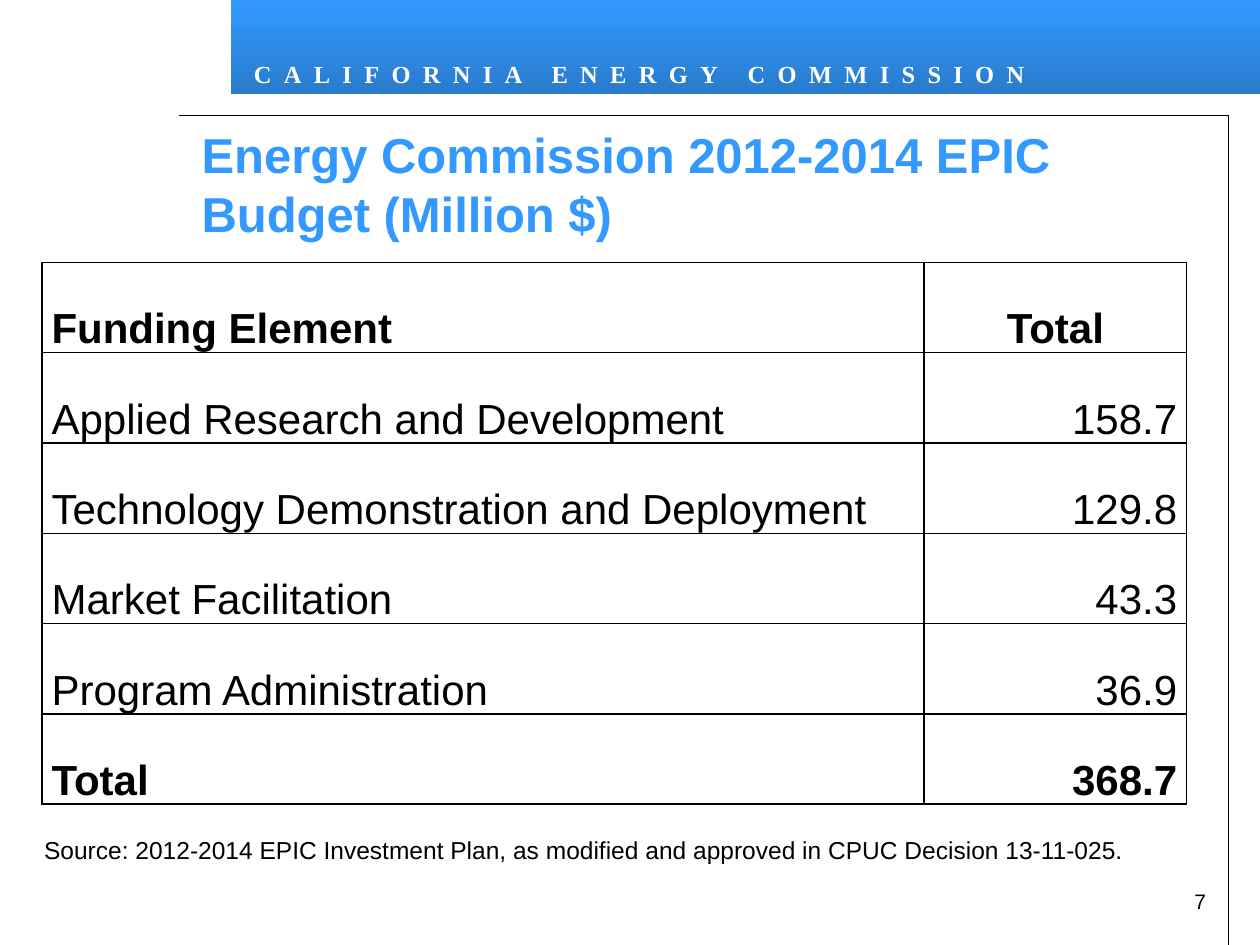
import pptx
import pptx.util
import pptx.dml.color
import pptx.enum.shapes
import pptx.enum.text
import pptx.oxml
import pptx.oxml.ns
from lxml import etree

Cm, Pt = pptx.util.Cm, pptx.util.Pt
Align = pptx.enum.text.PP_ALIGN
Anchor = pptx.enum.text.MSO_ANCHOR
Fit = pptx.enum.text.MSO_AUTO_SIZE
qn = pptx.oxml.ns.qn

hues = {"sky": "3399FF", "deep": "297BCC", "white": "FFFFFF", "black": "000000"}


def color(name):
    return pptx.dml.color.RGBColor.from_string(hues[name])


def write(frame, text, size, hue="black", bold=False, face="Arial", align=Align.LEFT):
    """Fill a text frame with one formatted paragraph and return its run."""
    frame.text = text
    par = frame.paragraphs[0]
    par.alignment = align
    run = par.runs[0]
    run.font.name = face
    run.font.size = Pt(size)
    run.font.bold = bold
    run.font.color.rgb = color(hue)
    return run


deck = pptx.Presentation()
deck.slide_width, deck.slide_height = Cm(25.4), Cm(19.05)
slide = deck.slides.add_slide(deck.slide_layouts[5])
shapes = slide.shapes

# Banner
band = shapes.add_shape(pptx.enum.shapes.MSO_SHAPE.RECTANGLE,
                        Cm(4.65), Cm(0), Cm(20.75), Cm(1.9))
band.shadow.inherit = False
band.line.fill.background()
band.fill.gradient()
band.fill.gradient_angle = 270
for stop, name in zip(band.fill.gradient_stops, ("sky", "deep")):
    stop.color.rgb = color(name)

box = shapes.add_textbox(Cm(4.87), Cm(1.06), Cm(20.32), Cm(0.85))
box.text_frame.word_wrap = True
run = write(box.text_frame, "CALIFORNIA ENERGY COMMISSION", 14, "white", True,
            "Times New Roman")
run.font._element.set("spc", "700")  # letter spacing, 7 pt

# Frame lines
left, right, top, base = Cm(3.6), Cm(24.77), Cm(2.33), Cm(19.05)
for ends in ((left, top, right, top), (right, top, right, base)):
    line = shapes.add_connector(pptx.enum.shapes.MSO_CONNECTOR.STRAIGHT, *ends)
    line.line.color.rgb = color("black")
    line.line.width = Pt(0.75)
    etree.SubElement(line._element.spPr, qn("a:effectLst"))

# Title
title = shapes.title
title.left, title.top, title.width, title.height = Cm(3.81), Cm(2.33), Cm(20.96), Cm(2.75)
title.text_frame.auto_size = Fit.NONE
title.text_frame.vertical_anchor = Anchor.MIDDLE
write(title.text_frame, "Energy Commission 2012-2014 EPIC Budget (Million $)", 28, "sky", True)

# Budget table
rows = [
    ("Funding Element", "Total"),
    ("Applied Research and Development", "158.7"),
    ("Technology Demonstration and Deployment", "129.8"),
    ("Market Facilitation", "43.3"),
    ("Program Administration", "36.9"),
    ("Total", "368.7"),
]
widths = (Cm(17.78), Cm(5.29))
high = Cm(1.82)
last = len(rows) - 1
grid = shapes.add_table(len(rows), 2, Cm(0.85), Cm(5.29), sum(widths), high * len(rows)).table
grid.horz_banding = False
for col, width in zip(grid.columns, widths):
    col.width = width

for i, row in enumerate(rows):
    grid.rows[i].height = high
    for j, text in enumerate(row):
        cell = grid.cell(i, j)
        cell.vertical_anchor = Anchor.BOTTOM
        cell.margin_left = cell.margin_right = Cm(0.19)
        cell.margin_top = cell.margin_bottom = 0
        if j == 0:
            align = Align.LEFT
        else:
            align = Align.CENTER if i == 0 else Align.RIGHT
        write(cell.text_frame, text, 24, bold=i in (0, last), align=align)
        props = cell._tc.get_or_add_tcPr()
        for side in ("lnL", "lnR", "lnT", "lnB"):
            edge = etree.SubElement(props, qn("a:" + side), w=str(Pt(1)))
            fill = etree.SubElement(edge, qn("a:solidFill"))
            etree.SubElement(fill, qn("a:srgbClr"), val=hues["black"])
        cell.fill.background()

# Source and page number
note = shapes.add_textbox(Cm(0.64), Cm(16.71), Cm(22.5), Cm(0.86))
note.text_frame.word_wrap = False
write(note.text_frame, "Source: 2012-2014 EPIC Investment Plan, as modified and "
      "approved in CPUC Decision 13-11-025.", 14)

page = shapes.add_textbox(Cm(23.29), Cm(17.78), Cm(1.27), Cm(0.85))
page.text_frame.word_wrap = True
write(page.text_frame, "7", 12, align=Align.RIGHT)

deck.save("out.pptx")
